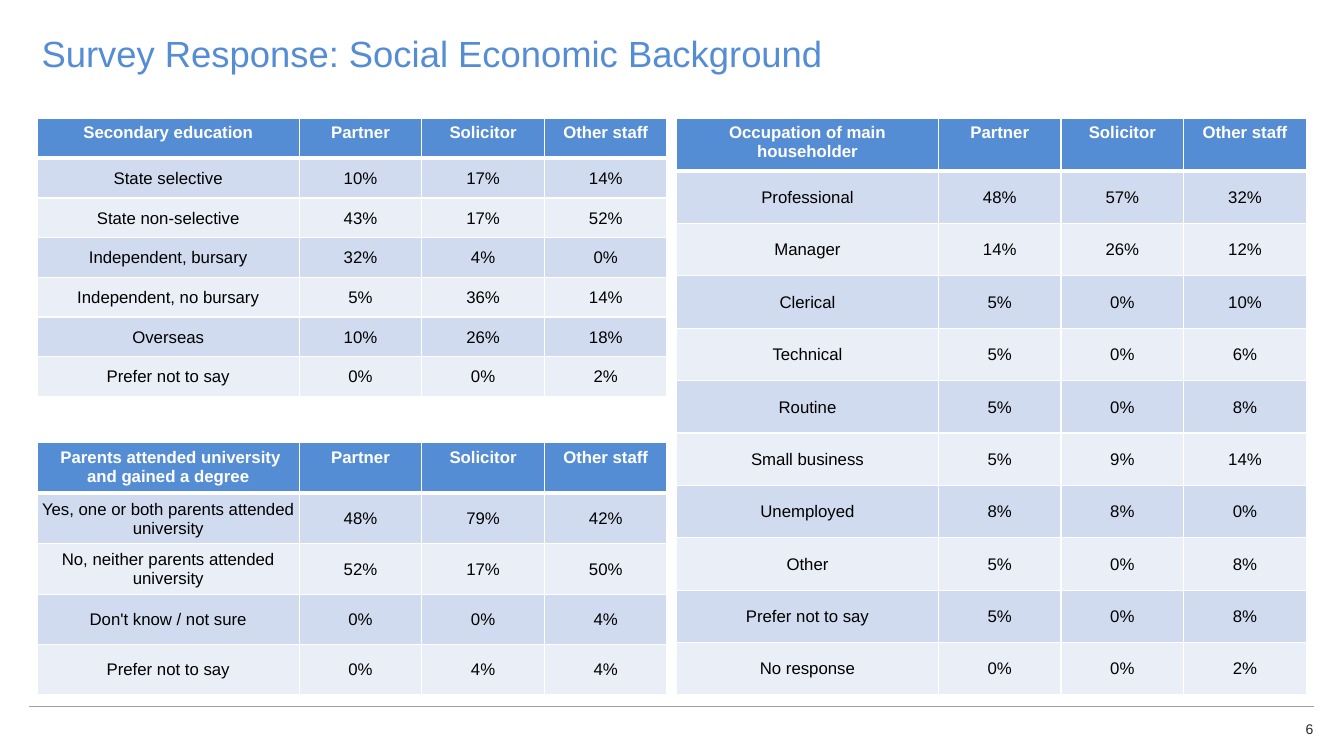
"""Build the survey response slide on social economic background."""
from lxml import etree
from pptx import Presentation
from pptx import util as u
from pptx.dml import color
from pptx.enum import shapes, text
from pptx.oxml import ns

COLORS = {
    "blue": "558DD5",
    "band_dark": "D1DBEF",
    "band_light": "E9EEF7",
    "white": "FFFFFF",
    "black": "000000",
    "number": "2A2A2A",
    "rule": "A0A0A0",
}
GROUPS = ["Partner", "Solicitor", "Other staff"]
COLUMN_WIDTHS = [6.6, 3.09, 3.09, 3.09]
TABLES = [
    {
        "left": 0.94, "top": 2.99, "row_height": 1,
        "rows": [
            ["Secondary education", *GROUPS],
            ["State selective", "10%", "17%", "14%"],
            ["State non-selective", "43%", "17%", "52%"],
            ["Independent, bursary", "32%", "4%", "0%"],
            ["Independent, no bursary", "5%", "36%", "14%"],
            ["Overseas", "10%", "26%", "18%"],
            ["Prefer not to say", "0%", "0%", "2%"],
        ],
    },
    {
        "left": 17.05, "top": 2.99, "row_height": 1.32,
        "rows": [
            ["Occupation of main householder", *GROUPS],
            ["Professional", "48%", "57%", "32%"],
            ["Manager", "14%", "26%", "12%"],
            ["Clerical", "5%", "0%", "10%"],
            ["Technical", "5%", "0%", "6%"],
            ["Routine", "5%", "0%", "8%"],
            ["Small business", "5%", "9%", "14%"],
            ["Unemployed", "8%", "8%", "0%"],
            ["Other", "5%", "0%", "8%"],
            ["Prefer not to say", "5%", "0%", "8%"],
            ["No response", "0%", "0%", "2%"],
        ],
    },
    {
        "left": 0.94, "top": 11.16, "row_height": 1.27,
        "rows": [
            [" Parents attended university and gained a degree", *GROUPS],
            ["Yes, one or both parents attended university", "48%", "79%", "42%"],
            ["No, neither parents attended university", "52%", "17%", "50%"],
            ["Don't know / not sure", "0%", "0%", "4%"],
            ["Prefer not to say", "0%", "4%", "4%"],
        ],
    },
]


def write_text(frame, content, size=12, ink="black", bold=False, align="CENTER", spacing=1.0):
    frame.word_wrap = True
    paragraph = frame.paragraphs[0]
    paragraph.alignment = getattr(text.PP_ALIGN, align)
    paragraph.line_spacing = spacing
    run = paragraph.add_run()
    run.text = content
    run.font.name = "Arial"
    run.font.size = u.Pt(size)
    run.font.bold = bold
    run.font.color.rgb = color.RGBColor.from_string(COLORS[ink])


def add_border(cell, side, width):
    line = etree.SubElement(cell._tc.get_or_add_tcPr(), ns.qn(f"a:{side}"), w=str(u.Pt(width)))
    fill = etree.SubElement(line, ns.qn("a:solidFill"))
    etree.SubElement(fill, ns.qn("a:srgbClr"), val=COLORS["white"])


presentation = Presentation()
presentation.slide_width = u.Cm(33.87)
presentation.slide_height = u.Cm(19.05)
slide = presentation.slides.add_slide(presentation.slide_layouts[6])

rule = slide.shapes.add_connector(
    shapes.MSO_CONNECTOR.STRAIGHT, u.Cm(0.74), u.Cm(17.8), u.Cm(33.12), u.Cm(17.8))
rule.line.color.rgb = color.RGBColor.from_string(COLORS["rule"])
rule.line.width = u.Pt(0.75)
etree.SubElement(rule._element.spPr, ns.qn("a:effectLst"))

labels = [
    ("Survey Response: Social Economic Background", (1.05, 0.91, 31.98, 1.63),
     {"size": 26, "ink": "blue", "align": "LEFT", "spacing": 0.9}),
    ("6", (31.83, 18.16, 1.27, 0.51),
     {"size": 10, "ink": "number", "align": "RIGHT"}),
]
for content, box, style in labels:
    frame = slide.shapes.add_textbox(*map(u.Cm, box)).text_frame
    frame.margin_left = frame.margin_right = frame.margin_top = frame.margin_bottom = 0
    write_text(frame, content, **style)

for survey in TABLES:
    rows = survey["rows"]
    table = slide.shapes.add_table(
        len(rows), len(COLUMN_WIDTHS), u.Cm(survey["left"]), u.Cm(survey["top"]),
        u.Cm(sum(COLUMN_WIDTHS)), u.Cm(survey["row_height"] * len(rows))).table
    for column, width in zip(table.columns, COLUMN_WIDTHS):
        column.width = u.Cm(width)
    for row_index, values in enumerate(rows):
        table.rows[row_index].height = u.Cm(survey["row_height"])
        header = row_index == 0
        band = "blue" if header else "band_dark" if row_index % 2 else "band_light"
        for column_index, value in enumerate(values):
            cell = table.cell(row_index, column_index)
            for side in ("lnL", "lnR", "lnT", "lnB"):
                thick = (header and side == "lnB") or (row_index == 1 and side == "lnT")
                add_border(cell, side, 3 if thick else 1)
            cell.fill.solid()
            cell.fill.fore_color.rgb = color.RGBColor.from_string(COLORS[band])
            if not header:
                cell.vertical_anchor = text.MSO_ANCHOR.MIDDLE
                cell.margin_left = cell.margin_right = cell.margin_top = u.Cm(0.02)
                cell.margin_bottom = 0
            write_text(cell.text_frame, value, ink="white" if header else "black", bold=header)

presentation.save("out.pptx")
